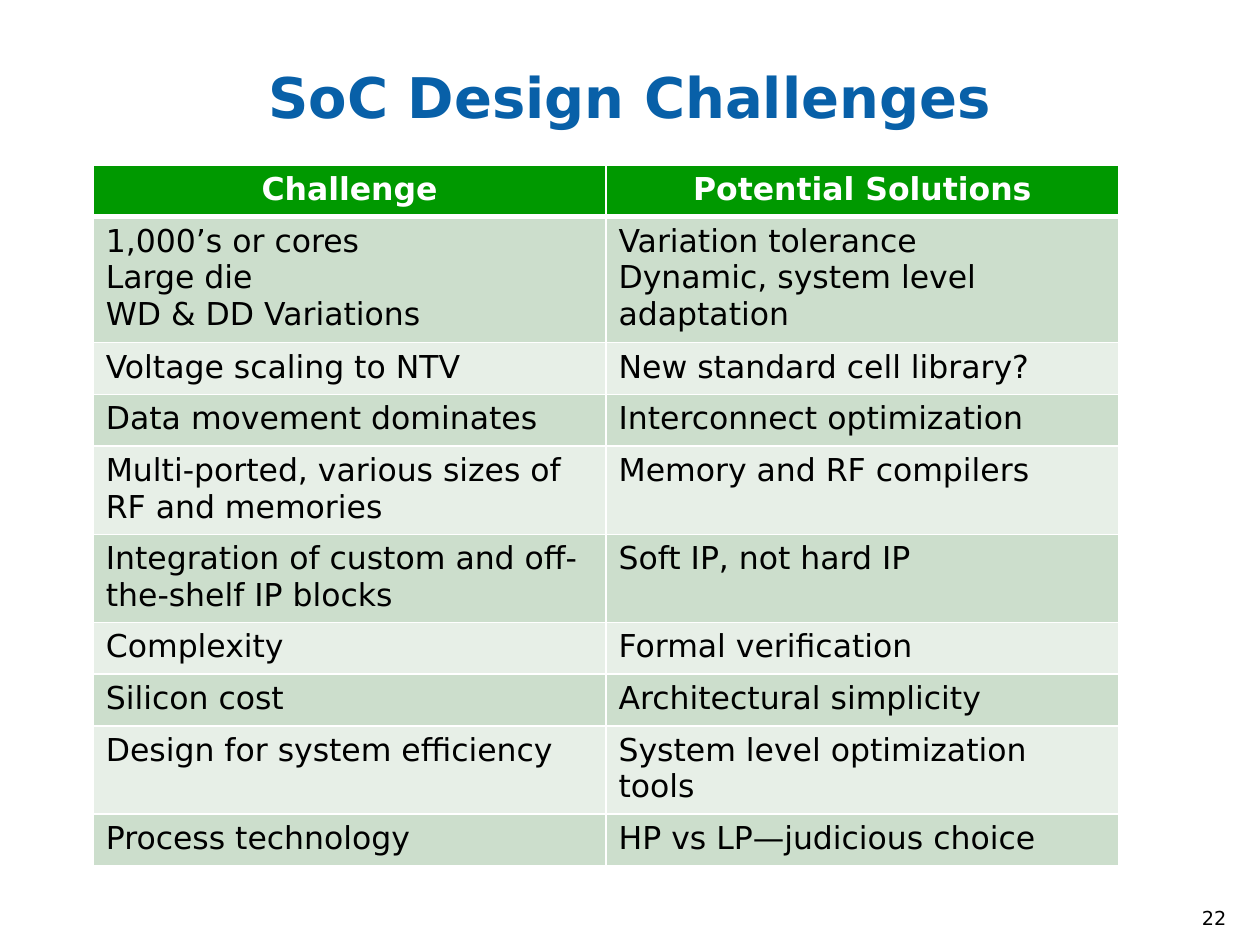
"""Build the SoC design challenges slide."""
from dataclasses import dataclass

from lxml.etree import SubElement
from pptx import Presentation
from pptx.dml.color import RGBColor as Rgb
from pptx.enum.text import MSO_ANCHOR as Anchor, PP_ALIGN as Align
from pptx.oxml.ns import qn
from pptx.util import Inches, Pt


@dataclass(frozen=True)
class Theme:
    font: str = "DejaVu Sans"
    title_color: str = "0860A8"
    header_fill: str = "009900"
    band_fills: tuple = ("CCDECC", "E7EFE7")
    light: str = "FFFFFF"
    dark: str = "000000"
    title_size: int = 32
    table_size: int = 18
    number_size: int = 11
    rule: int = 1
    header_rule: int = 3


@dataclass(frozen=True)
class TextStyle:
    size: int
    color: str
    bold: bool = False
    align: Align = Align.LEFT
    spacing: float = 1.0


@dataclass(frozen=True)
class Label:
    text: str
    box: tuple
    style: TextStyle
    frame: dict


@dataclass(frozen=True)
class Row:
    challenge: str
    solution: str


THEME = Theme()
HEADER_STYLE = TextStyle(THEME.table_size, THEME.light, True, Align.CENTER)
BODY_STYLE = TextStyle(THEME.table_size, THEME.dark)
LABELS = (
    Label("22", (9.44, 7.14, 0.47, 0.29),
          TextStyle(THEME.number_size, THEME.dark), {"word_wrap": False}),
    Label("SoC Design Challenges", (0.5, 0.17, 9, 1.25),
          TextStyle(THEME.title_size, THEME.title_color, True, Align.CENTER, 0.9),
          {"word_wrap": True, "vertical_anchor": Anchor.MIDDLE}),
)
ROWS = (
    Row("Challenge", "Potential Solutions"),
    Row("1,000’s or cores\nLarge die\nWD & DD Variations",
        "Variation tolerance\nDynamic, system level adaptation"),
    Row("Voltage scaling to NTV", "New standard cell library?"),
    Row("Data movement dominates", "Interconnect optimization"),
    Row("Multi-ported, various sizes of RF and memories", "Memory and RF compilers"),
    Row("Integration of custom and off-the-shelf IP blocks", "Soft IP, not hard IP"),
    Row("Complexity", "Formal verification"),
    Row("Silicon cost", "Architectural simplicity"),
    Row("Design for system efficiency", "System level optimization tools"),
    Row("Process technology", "HP vs LP—judicious choice"),
)
TABLE_LEFT, TABLE_TOP = 0.74, 1.31
COLUMN_WIDTH, ROW_HEIGHT = 4.07, 0.41


def write_text(frame, text: str, style: TextStyle) -> None:
    """Fill a text frame with one styled paragraph per line."""
    frame.text = text
    font_format = {"name": THEME.font, "size": Pt(style.size), "bold": style.bold}
    for paragraph in frame.paragraphs:
        paragraph.alignment = style.align
        paragraph.line_spacing = style.spacing
        for run in paragraph.runs:
            for name, value in font_format.items():
                setattr(run.font, name, value)
            run.font.color.rgb = Rgb.from_string(style.color)


def add_label(slide, label: Label) -> None:
    """Add a text box outside the table."""
    frame = slide.shapes.add_textbox(*map(Inches, label.box)).text_frame
    for name, value in label.frame.items():
        setattr(frame, name, value)
    write_text(frame, label.text, label.style)


def add_borders(cell, top: int, bottom: int) -> None:
    """Draw the four rules around a table cell."""
    properties = cell._tc.get_or_add_tcPr()
    widths = {"a:lnL": THEME.rule, "a:lnR": THEME.rule, "a:lnT": top, "a:lnB": bottom}
    for tag, width in widths.items():
        line = SubElement(properties, qn(tag), w=str(Pt(width)))
        fill = SubElement(line, qn("a:solidFill"))
        SubElement(fill, qn("a:srgbClr"), val=THEME.light)


def add_challenge_table(slide, rows: tuple[Row, ...]) -> None:
    """Add the table with its header and banded rows."""
    table = slide.shapes.add_table(
        len(rows), 2, Inches(TABLE_LEFT), Inches(TABLE_TOP),
        Inches(2 * COLUMN_WIDTH), Inches(len(rows) * ROW_HEIGHT)).table
    for index, row in enumerate(rows):
        is_header = index == 0
        style = HEADER_STYLE if is_header else BODY_STYLE
        fill = THEME.header_fill if is_header else THEME.band_fills[(index - 1) % 2]
        top = THEME.header_rule if index == 1 else THEME.rule
        bottom = THEME.header_rule if is_header else THEME.rule
        for column, text in enumerate((row.challenge, row.solution)):
            cell = table.cell(index, column)
            write_text(cell.text_frame, text, style)
            add_borders(cell, top, bottom)
            cell.fill.solid()
            cell.fill.fore_color.rgb = Rgb.from_string(fill)


def main() -> None:
    """Build and save the slide."""
    deck = Presentation()
    deck.slide_width, deck.slide_height = Inches(10), Inches(7.5)
    slide = deck.slides.add_slide(deck.slide_layouts[6])
    for label in LABELS:
        add_label(slide, label)
    add_challenge_table(slide, ROWS)
    deck.save("out.pptx")


if __name__ == "__main__":
    main()
